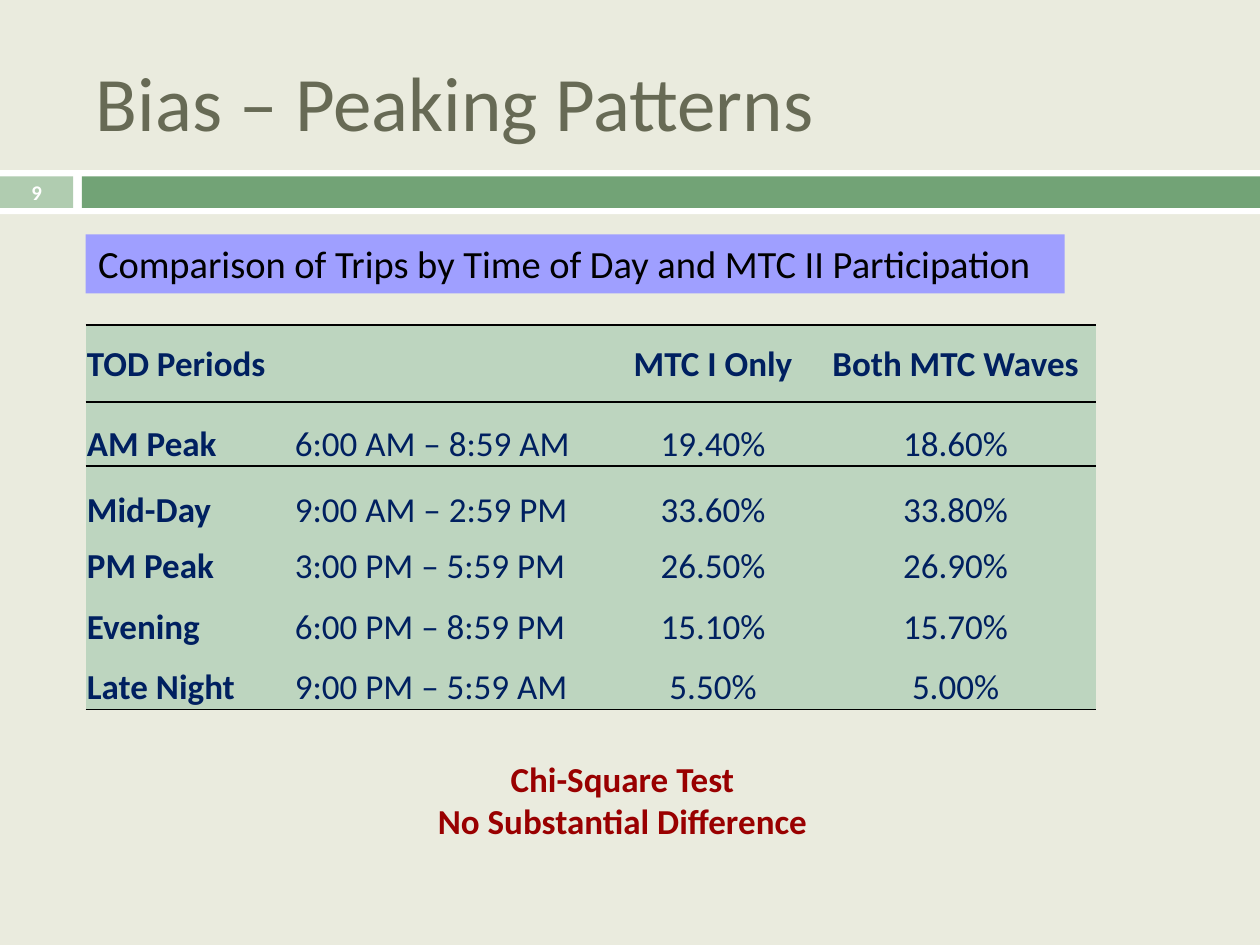
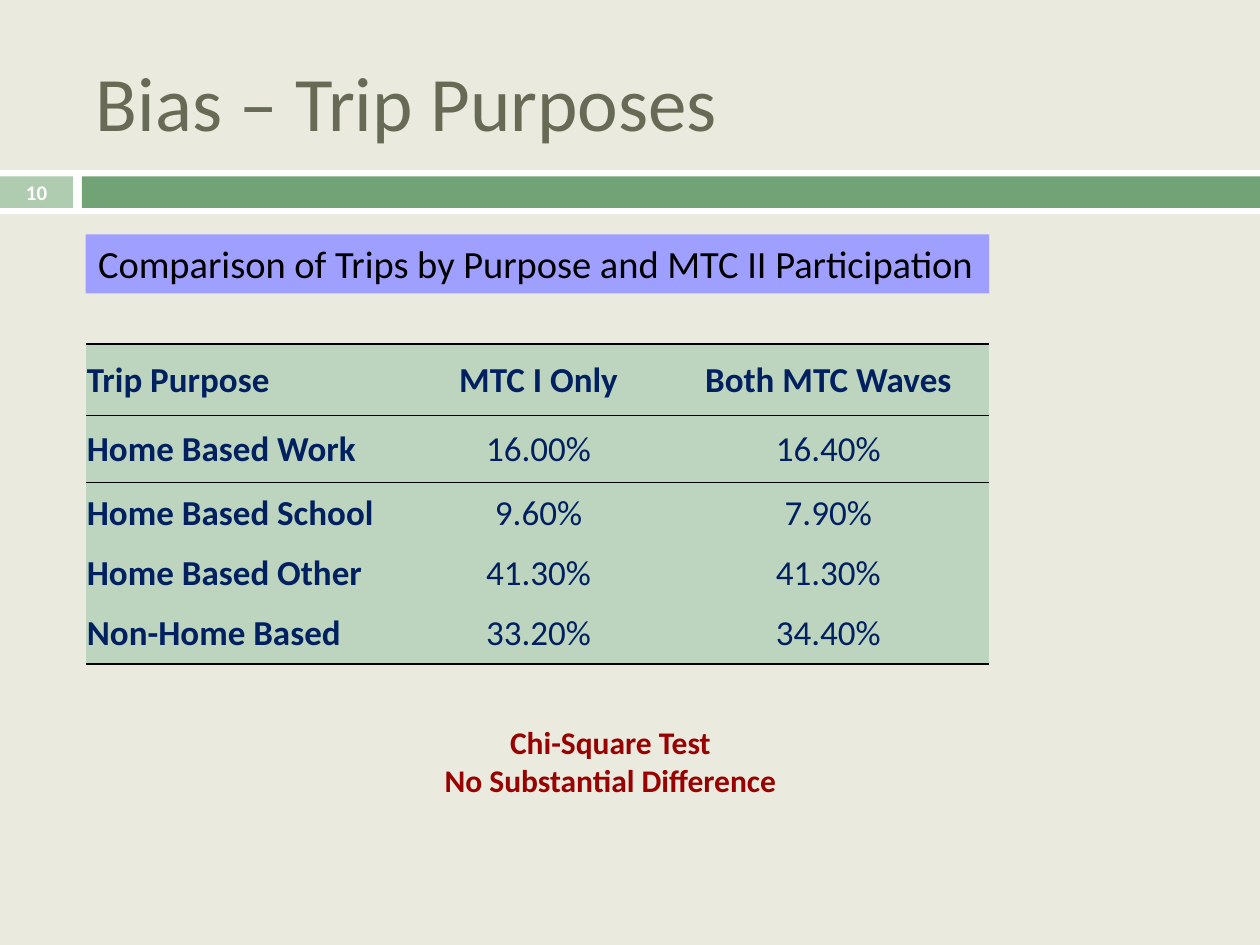
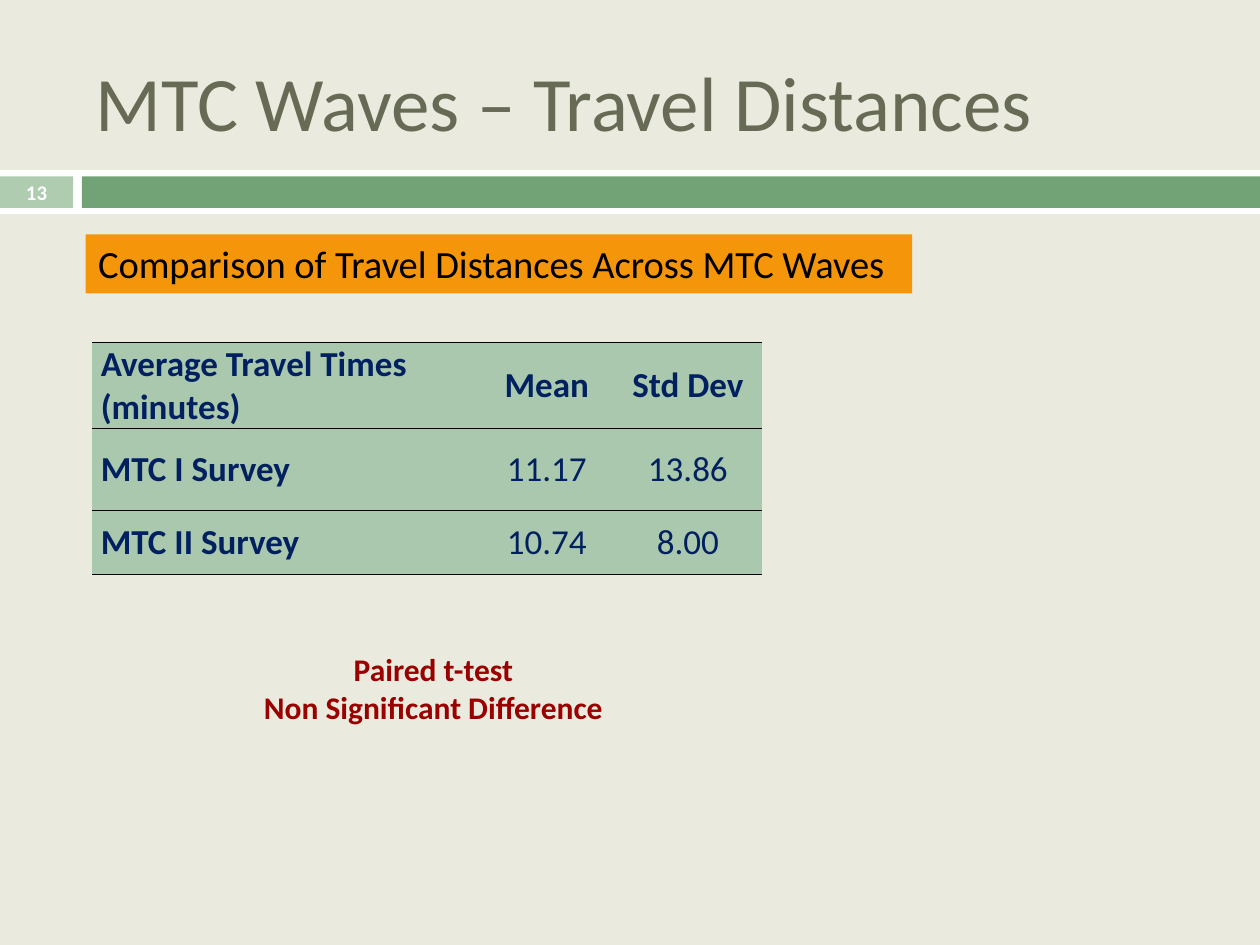
from lxml.etree import SubElement
from pptx import Presentation
from pptx.dml.color import RGBColor
from pptx.enum.shapes import MSO_SHAPE
from pptx.enum.text import MSO_ANCHOR, PP_ALIGN
from pptx.oxml.ns import qn
from pptx.util import Inches, Pt

HUES = {
    "back": "EAEBDE", "white": "FFFFFF", "pale": "B0CCB0", "green": "72A376",
    "title": "676A55", "navy": "002060", "red": "990000", "black": "000000",
    "mint": "BDD5BF", "sage": "AAC8AD", "lilac": "9F9FFF", "orange": "F4950A",
}
PLAIN = "{2D5ABB26-0587-4C30-8999-92F81FD0307C}"

SLIDES = [
    {
        "title": "Bias – Peaking Patterns",
        "page": "9",
        "label": "Comparison of Trips by Time of Day and MTC II Participation",
        "wide": 7.77, "tint": "lilac",
        "spot": (0.68, 2.58), "fill": "mint",
        "pad": (0.01, 0.01), "anchor": MSO_ANCHOR.BOTTOM,
        "cols": [1.65, 2.52, 1.62, 2.23],
        "tall": [0.61, 0.51, 0.52, 0.45, 0.48, 0.48],
        "rows": [
            ["TOD Periods", "", "MTC I Only", "Both MTC Waves"],
            ["AM Peak", "6:00 AM – 8:59 AM", "19.40%", "18.60%"],
            ["Mid-Day", "9:00 AM – 2:59 PM", "33.60%", "33.80%"],
            ["PM Peak", "3:00 PM – 5:59 PM", "26.50%", "26.90%"],
            ["Evening", "6:00 PM – 8:59 PM", "15.10%", "15.70%"],
            ["Late Night", "9:00 PM – 5:59 AM", "5.50%", "5.00%"],
        ],
        "note": ["Chi-Square Test", "No Substantial Difference"],
        "place": (2.69, 5.96, 4.5, 0.77), "size": 20,
    },
    {
        "title": "Bias – Trip Purposes",
        "page": "10",
        "label": "Comparison of Trips by Purpose and MTC II Participation",
        "wide": 7.17, "tint": "lilac",
        "spot": (0.68, 2.73), "fill": "mint",
        "pad": (0.01, 0.01), "anchor": MSO_ANCHOR.MIDDLE,
        "cols": [2.57, 2.05, 2.55],
        "tall": [0.57, 0.53, 0.49, 0.46, 0.49],
        "rows": [
            ["Trip Purpose", "MTC I Only", "Both MTC Waves"],
            ["Home Based Work", "16.00%", "16.40%"],
            ["Home Based School", "9.60%", "7.90%"],
            ["Home Based Other", "41.30%", "41.30%"],
            ["Non-Home Based", "33.20%", "34.40%"],
        ],
        "note": ["Chi-Square Test", "No Substantial Difference"],
        "place": (3.1, 5.69, 3.49, 0.7), "size": 18,
    },
    {
        "title": "MTC Waves – Travel Distances",
        "page": "13",
        "label": "Comparison of Travel Distances Across MTC Waves",
        "wide": 6.56, "tint": "orange",
        "spot": (0.73, 2.72), "fill": "sage",
        "pad": (0.07, 0), "anchor": MSO_ANCHOR.MIDDLE,
        "cols": [3.08, 1.06, 1.18],
        "tall": [0.65, 0.65, 0.51],
        "rows": [
            ["Average Travel Times (minutes)", "Mean", "Std Dev"],
            ["MTC I Survey", "11.17", "13.86"],
            ["MTC II Survey", "10.74", "8.00"],
        ],
        "note": ["Paired t-test", "Non Significant Difference"],
        "place": (1.72, 5.11, 3.44, 0.7), "size": 18,
    },
]


def write(frame, lines, size, hue, bold=False, align=PP_ALIGN.LEFT):
    frame.word_wrap = True
    frame.text = "\n".join(lines)
    for para in frame.paragraphs:
        para.alignment = align
        para.font.name = "Calibri"
        para.font.size = Pt(size)
        para.font.bold = bold
        para.font.color.rgb = RGBColor.from_string(HUES[hue])


def block(slide, place, hue):
    shape = slide.shapes.add_shape(MSO_SHAPE.RECTANGLE, *map(Inches, place))
    shape.shadow.inherit = False
    shape.fill.solid()
    shape.fill.fore_color.rgb = RGBColor.from_string(HUES[hue])
    shape.line.fill.background()
    return shape


deck = Presentation()
deck.slide_width, deck.slide_height = Inches(10), Inches(7.5)
back = deck.slide_master.background.fill
back.solid()
back.fore_color.rgb = RGBColor.from_string(HUES["back"])

for item in SLIDES:
    slide = deck.slides.add_slide(deck.slide_layouts[5])

    block(slide, (0, 1.35, 10, 0.35), "white")
    page = block(slide, (0, 1.4, 0.58, 0.25), "pale")
    block(slide, (0.65, 1.4, 9.35, 0.25), "green")
    page.text_frame.margin_top = page.text_frame.margin_bottom = 0
    page.text_frame.vertical_anchor = MSO_ANCHOR.MIDDLE
    write(page.text_frame, [item["page"]], 11.9, "white", True, PP_ALIGN.CENTER)

    title = slide.shapes.title
    title.left, title.top = Inches(0.66), Inches(0.26)
    title.width, title.height = Inches(8.92), Inches(1.08)
    title.text_frame.vertical_anchor = MSO_ANCHOR.MIDDLE
    write(title.text_frame, [item["title"]], 44, "title")

    label = block(slide, (0.68, 1.86, item["wide"], 0.47), item["tint"])
    label.text_frame.vertical_anchor = MSO_ANCHOR.TOP
    write(label.text_frame, [item["label"]], 22, "black")

    rows, cols, tall = item["rows"], item["cols"], item["tall"]
    place = (*item["spot"], sum(cols), sum(tall))
    frame = slide.shapes.add_table(len(rows), len(cols), *map(Inches, place))
    for style in frame.element.iter(qn("a:tableStyleId")):
        style.text = PLAIN
    table = frame.table
    table.first_row = table.horz_banding = False
    for col, width in zip(table.columns, cols):
        col.width = Inches(width)
    for row, height in zip(table.rows, tall):
        row.height = Inches(height)
    side, top = map(Inches, item["pad"])
    for r, row in enumerate(rows):
        for c, text in enumerate(row):
            cell = table.cell(r, c)
            cell.margin_left = cell.margin_right = side
            cell.margin_top, cell.margin_bottom = top, 0
            cell.vertical_anchor = item["anchor"] if r else MSO_ANCHOR.MIDDLE
            value = c >= len(cols) - 2
            align = PP_ALIGN.CENTER if value else PP_ALIGN.LEFT
            write(cell.text_frame, [text], 20, "navy", r == 0 or c == 0, align)
            edges = {"a:lnT": r < 2, "a:lnB": r in (0, len(rows) - 1)}
            props = cell._tc.get_or_add_tcPr()
            for tag, shown in edges.items():
                if shown:
                    line = SubElement(props, qn(tag), w=str(Pt(1)))
                    solid = SubElement(line, qn("a:solidFill"))
                    SubElement(solid, qn("a:srgbClr"), val=HUES["black"])
            cell.fill.solid()
            cell.fill.fore_color.rgb = RGBColor.from_string(HUES[item["fill"]])
    if not rows[0][1]:
        table.cell(0, 0).merge(table.cell(0, 1))

    note = slide.shapes.add_textbox(*map(Inches, item["place"]))
    write(note.text_frame, item["note"], item["size"], "red", True, PP_ALIGN.CENTER)

deck.save("out.pptx")
